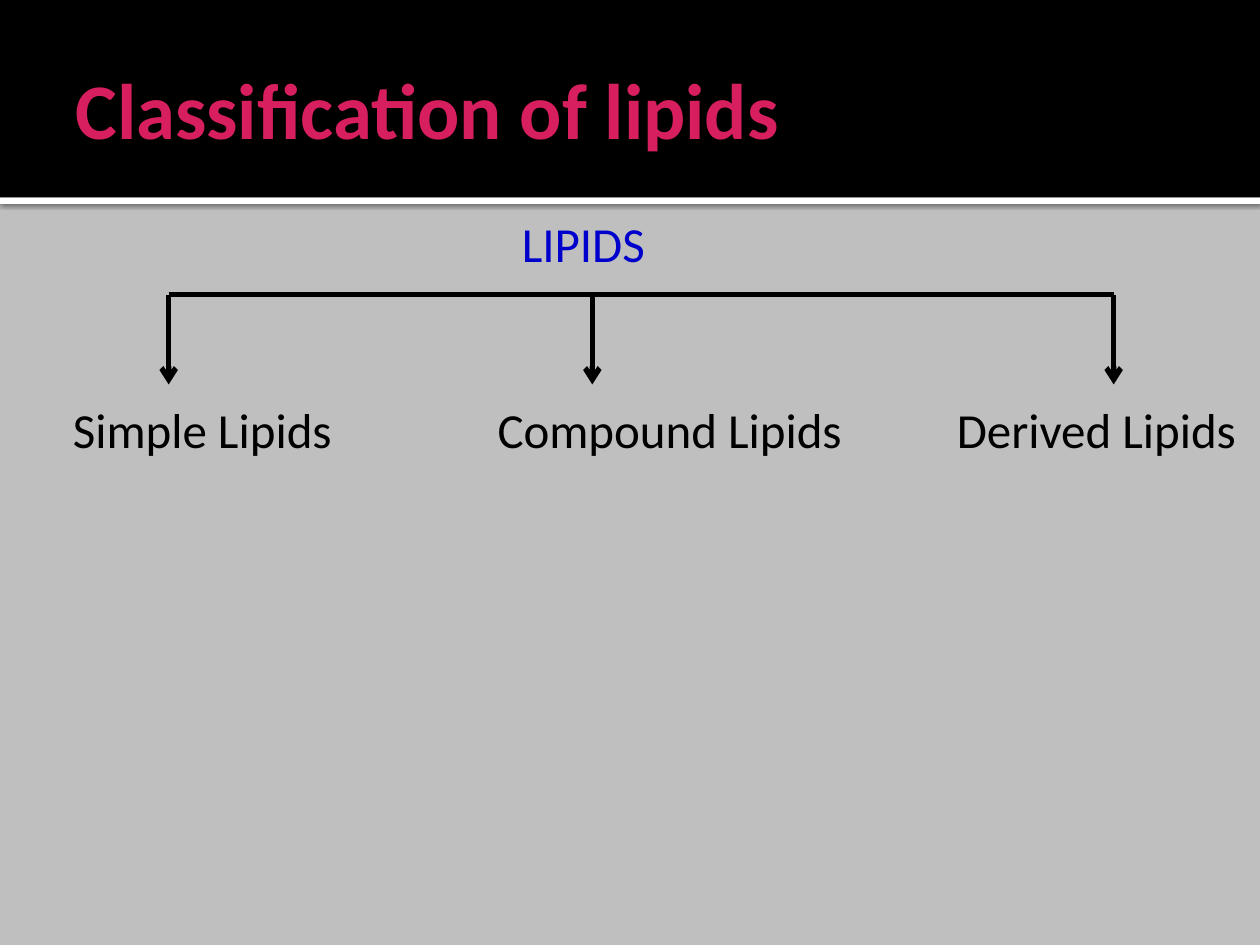
"""Build a slide that shows the three classes of lipids as a small tree."""
from lxml.etree import SubElement
from pptx import Presentation
from pptx.dml.color import RGBColor
from pptx.enum.shapes import MSO_CONNECTOR, MSO_SHAPE
from pptx.enum.text import MSO_ANCHOR, PP_ALIGN
from pptx.oxml.ns import qn
from pptx.util import Cm, Pt

BLACK = RGBColor(0x00, 0x00, 0x00)
WHITE = RGBColor(0xFF, 0xFF, 0xFF)
GRAY = RGBColor(0xBF, 0xBF, 0xBF)
PINK = RGBColor(0xD7, 0x1E, 0x5F)
BLUE = RGBColor(0x00, 0x00, 0xCC)


def add_label(text, left, top, width, height, size=28, color=BLACK, align=PP_ALIGN.LEFT):
    box = slide.shapes.add_textbox(Cm(left), Cm(top), Cm(width), Cm(height))
    box.text_frame.word_wrap = True
    paragraph = box.text_frame.paragraphs[0]
    paragraph.text = text
    paragraph.alignment = align
    paragraph.font.name = "Calibri"
    paragraph.font.size = Pt(size)
    paragraph.font.color.rgb = color
    return box


def add_line(x1, y1, x2, y2, arrow=False):
    line = slide.shapes.add_connector(MSO_CONNECTOR.STRAIGHT, Cm(x1), Cm(y1), Cm(x2), Cm(y2))
    line.line.color.rgb = BLACK
    line.line.width = Pt(3)
    if arrow:
        SubElement(line.line._get_or_add_ln(), qn("a:tailEnd"), type="arrow")
    SubElement(line._element.spPr, qn("a:effectLst"))


presentation = Presentation()
presentation.slide_width, presentation.slide_height = Cm(25.4), Cm(19.05)
slide = presentation.slides.add_slide(presentation.slide_layouts[6])
slide.background.fill.solid()
slide.background.fill.fore_color.rgb = GRAY

header_height = 3.98
bands = []
for top, height, color in [(header_height, 0.13, WHITE), (0, header_height, BLACK)]:
    band = slide.shapes.add_shape(MSO_SHAPE.RECTANGLE, 0, Cm(top), Cm(25.4), Cm(height))
    band.shadow.inherit = False
    band.fill.solid()
    band.fill.fore_color.rgb = color
    band.line.fill.background()
    bands.append(band)

effects = bands[0]._element.spPr.find(qn("a:effectLst"))
shadow = SubElement(effects, qn("a:outerShdw"), blurRad=str(Pt(2.5)), dist=str(Pt(0.8)),
                    dir="5400000", algn="t", rotWithShape="0")
shadow_color = SubElement(shadow, qn("a:srgbClr"), val=str(BLACK))
SubElement(shadow_color, qn("a:alpha"), val="60000")

title = add_label("Classification of lipids", 1.27, 0.43, 22.86, 3.48, 45, PINK)
title.text_frame.vertical_anchor = MSO_ANCHOR.MIDDLE
title.text_frame.paragraphs[0].font.bold = True

add_label("LIPIDS", 6.58, 4.17, 10.36, 1.45, color=BLUE, align=PP_ALIGN.CENTER)

branch_top, branch_bottom = 5.94, 7.75
branches = [
    ("Simple Lipids", 1.22, 6.15, 3.4),
    ("Compound Lipids", 9.78, 7.67, 11.94),
    ("Derived Lipids", 19.04, 6.36, 22.45),
]
add_line(branches[0][3], branch_top, branches[-1][3], branch_top)
for name, left, width, arrow_x in branches:
    add_label(name, left, 7.92, width, 1.45)
    add_line(arrow_x, branch_top, arrow_x, branch_bottom, arrow=True)

presentation.save("out.pptx")
